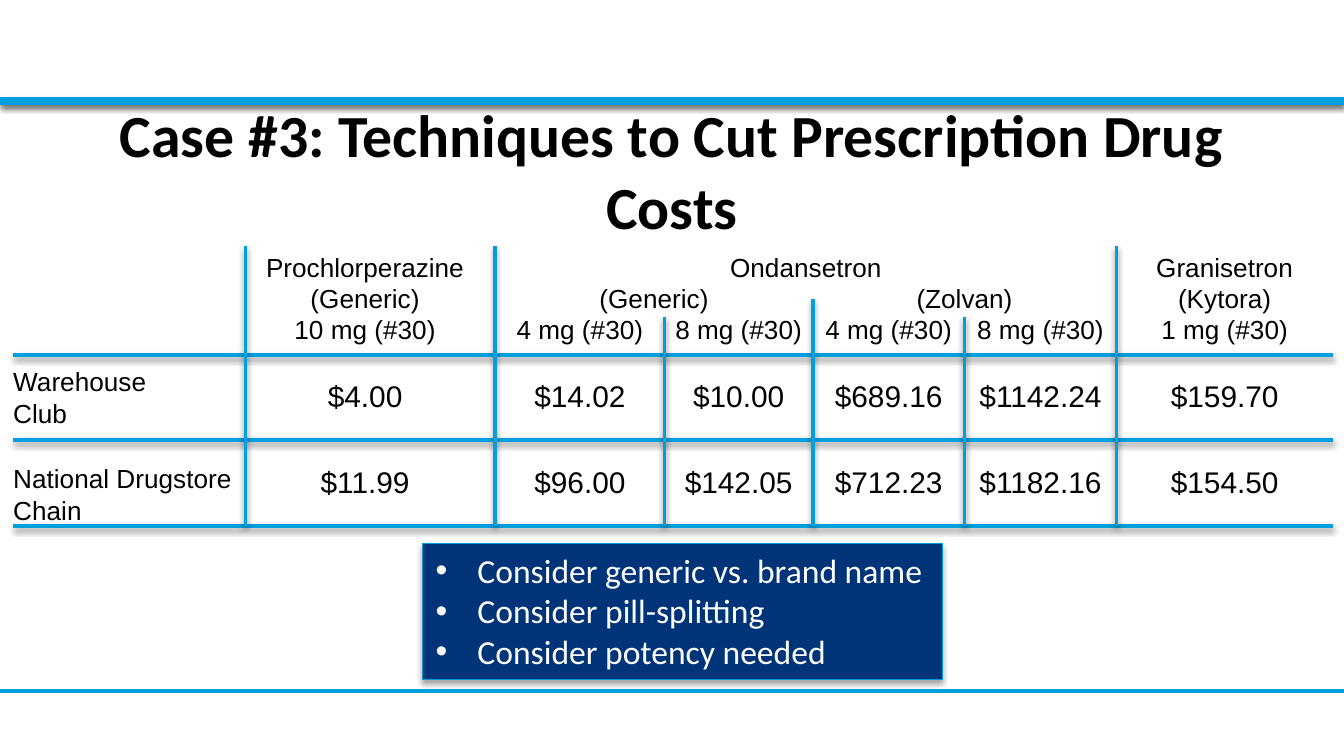
from lxml import etree
from pptx import Presentation
from pptx.dml.color import RGBColor
from pptx.enum.shapes import MSO_CONNECTOR as CONN, MSO_SHAPE as SHAPE
from pptx.enum.text import MSO_ANCHOR as ANCHOR, MSO_AUTO_SIZE as AUTO, PP_ALIGN as ALIGN
from pptx.oxml.ns import qn
from pptx.util import Cm, Pt

COLORS = {"white": "FFFFFF", "black": "000000", "line": "00A0DF",
          "navy": "003479", "edge": "009CDA"}
PLAIN_STYLE = "{2D5ABB26-0587-4C30-8999-92F81FD0307C}"
COL_WIDTHS = [4.39, 4.72, 3.2, 2.8, 2.87, 2.87, 4.09]
ROW_HEIGHTS = [0.7, 0.6, 0.75, 1.6, 1.63]
ROWS = [
    ["", "Prochlorperazine", "Ondansetron", "", "", "", "Granisetron"],
    ["", "(Generic)", "(Generic)", "", "(Zolvan)", "", "(Kytora)"],
    ["", "10 mg (#30)", "4 mg (#30)", "8 mg (#30)", "4 mg (#30)", "8 mg (#30)", "1 mg (#30)"],
    ["Warehouse\nClub", "$4.00", "$14.02", "$10.00", "$689.16", "$1142.24", "$159.70"],
    ["National Drugstore\nChain", "$11.99", "$96.00", "$142.05", "$712.23", "$1182.16", "$154.50"],
]
MERGES = [((0, 0), (2, 0)), ((0, 2), (0, 5)), ((1, 2), (1, 3)), ((1, 4), (1, 5))]
ANCHORS = [ANCHOR.BOTTOM, ANCHOR.MIDDLE, ANCHOR.TOP, ANCHOR.MIDDLE, ANCHOR.MIDDLE]
COLUMN_RULE_TOPS = [4.65, 4.65, 5.99, 5.66, 5.99, 4.65]
HEADER_ROWS = 3


def rgb(name):
    return RGBColor.from_string(COLORS[name])


def write(tf, text, size=14, font="Arial", color="black", bold=False,
          align=ALIGN.LEFT, spacing=None, bullet=None, indent=0.79):
    for i, line in enumerate(text.split("\n")):
        p = tf.paragraphs[0] if i == 0 else tf.add_paragraph()
        p.alignment = align
        p.space_before = Pt(0)
        if spacing:
            p.line_spacing = spacing
        if bullet:
            pPr = p._p.get_or_add_pPr()
            pPr.set("marL", str(Cm(indent)))
            pPr.set("indent", str(-Cm(indent)))
            etree.SubElement(pPr, qn("a:buFont"), typeface="Arial")
            etree.SubElement(pPr, qn("a:buChar"), char=bullet)
        if not line:
            etree.SubElement(p._p, qn("a:endParaRPr"), sz=str(size * 100))
            continue
        r = p.add_run()
        r.text = line
        r.font.size, r.font.name, r.font.bold = Pt(size), font, bold
        r.font.color.rgb = rgb(color)


def add_shadow(sp, distance=1.8, alpha=35):
    effects = etree.SubElement(sp._element.spPr, qn("a:effectLst"))
    shadow = etree.SubElement(effects, qn("a:outerShdw"), blurRad=str(Pt(3.1)),
                              dist=str(Pt(distance)), dir="5400000", rotWithShape="0")
    clr = etree.SubElement(shadow, qn("a:srgbClr"), val=COLORS["black"])
    etree.SubElement(clr, qn("a:alpha"), val=str(alpha * 1000))


class Deck:
    def __init__(self, width, height):
        self.prs = Presentation()
        self.prs.slide_width, self.prs.slide_height = Cm(width), Cm(height)
        self.slide = self.prs.slides.add_slide(self.prs.slide_layouts[1])

    def place(self, sp, x, y, w, h):
        sp.left, sp.top, sp.width, sp.height = Cm(x), Cm(y), Cm(w), Cm(h)
        tf = sp.text_frame
        tf.word_wrap, tf.auto_size = True, AUTO.NONE
        return tf

    def title(self, text, *box):
        tf = self.place(self.slide.shapes.title, *box)
        tf.vertical_anchor = ANCHOR.MIDDLE
        write(tf, text, size=32, font="Calibri", bold=True, align=ALIGN.CENTER)

    def bullets(self, text, *box):
        sp = self.slide.placeholders[1]
        tf = self.place(sp, *box)
        tf.vertical_anchor = ANCHOR.TOP
        sp.fill.solid()
        sp.fill.fore_color.rgb = rgb("navy")
        sp.line.color.rgb = rgb("edge")
        sp.line.width = Pt(0.75)
        add_shadow(sp)
        write(tf, text, size=18, font="Calibri", color="white", bullet="•")

    def band(self, x, y, w, h):
        sp = self.slide.shapes.add_shape(SHAPE.RECTANGLE, Cm(x), Cm(y), Cm(w), Cm(h))
        sp.fill.solid()
        sp.fill.fore_color.rgb = rgb("white")
        sp.line.fill.background()
        add_shadow(sp)

    def rule(self, x1, y1, x2, y2, weight=2, shadow=True):
        sp = self.slide.shapes.add_connector(
            CONN.STRAIGHT, Cm(x1), Cm(y1), Cm(x2), Cm(y2))
        sp.line.color.rgb = rgb("line")
        sp.line.width = Pt(weight)
        if shadow:
            add_shadow(sp, 1.6, 38)
        else:
            etree.SubElement(sp._element.spPr, qn("a:effectLst"))

    def price_table(self, x, y):
        frame = self.slide.shapes.add_table(
            len(ROWS), len(COL_WIDTHS), Cm(x), Cm(y),
            Cm(sum(COL_WIDTHS)), Cm(sum(ROW_HEIGHTS)))
        table = frame.table
        table.first_row = table.horz_banding = False
        table._tbl.tblPr.find(qn("a:tableStyleId")).text = PLAIN_STYLE
        for col, width in zip(table.columns, COL_WIDTHS):
            col.width = Cm(width)
        for row, height in zip(table.rows, ROW_HEIGHTS):
            row.height = Cm(height)
        for i, row in enumerate(ROWS):
            for j, text in enumerate(row):
                self.price_cell(table.cell(i, j), i, j, text)
        for start, end in MERGES:
            table.cell(*start).merge(table.cell(*end))

    def price_cell(self, cell, i, j, text):
        cell.margin_left = cell.margin_right = cell.margin_top = cell.margin_bottom = 0
        if j == 1:
            cell.margin_right = Cm(0.2)
        is_label = j == 0 and i >= HEADER_ROWS
        cell.vertical_anchor = ANCHOR.BOTTOM if is_label and i == len(ROWS) - 1 else ANCHORS[i]
        write(cell.text_frame, text, size=16 if i >= HEADER_ROWS and j else 14,
              align=ALIGN.CENTER if j else ALIGN.LEFT, spacing=1.08 if is_label else None)
        cell.fill.background()

    def price_grid(self, x, y):
        right, bottom = x + sum(COL_WIDTHS), y + sum(ROW_HEIGHTS)
        for n in range(HEADER_ROWS, len(ROWS) + 1):
            row_y = y + sum(ROW_HEIGHTS[:n])
            self.rule(x, row_y, right, row_y)
        for n, top in enumerate(COLUMN_RULE_TOPS, 1):
            col_x = x + sum(COL_WIDTHS[:n])
            self.rule(col_x, top, col_x, bottom)


def main():
    deck = Deck(25.4, 14.29)
    deck.band(0, 0, 25.4, 1.96)
    deck.rule(0, 13.06, 25.4, 13.06, shadow=False)
    deck.rule(0, 1.91, 25.4, 1.91, weight=4.5)
    deck.title("Case #3: Techniques to Cut Prescription Drug Costs", 1.27, 2.01, 22.86, 2.39)
    deck.price_table(0.25, 4.66)
    deck.price_grid(0.25, 4.66)
    deck.bullets("Consider generic vs. brand name\nConsider pill-splitting\n"
                 "Consider potency needed", 7.98, 10.27, 9.83, 2.57)
    deck.prs.save("out.pptx")


if __name__ == "__main__":
    main()
